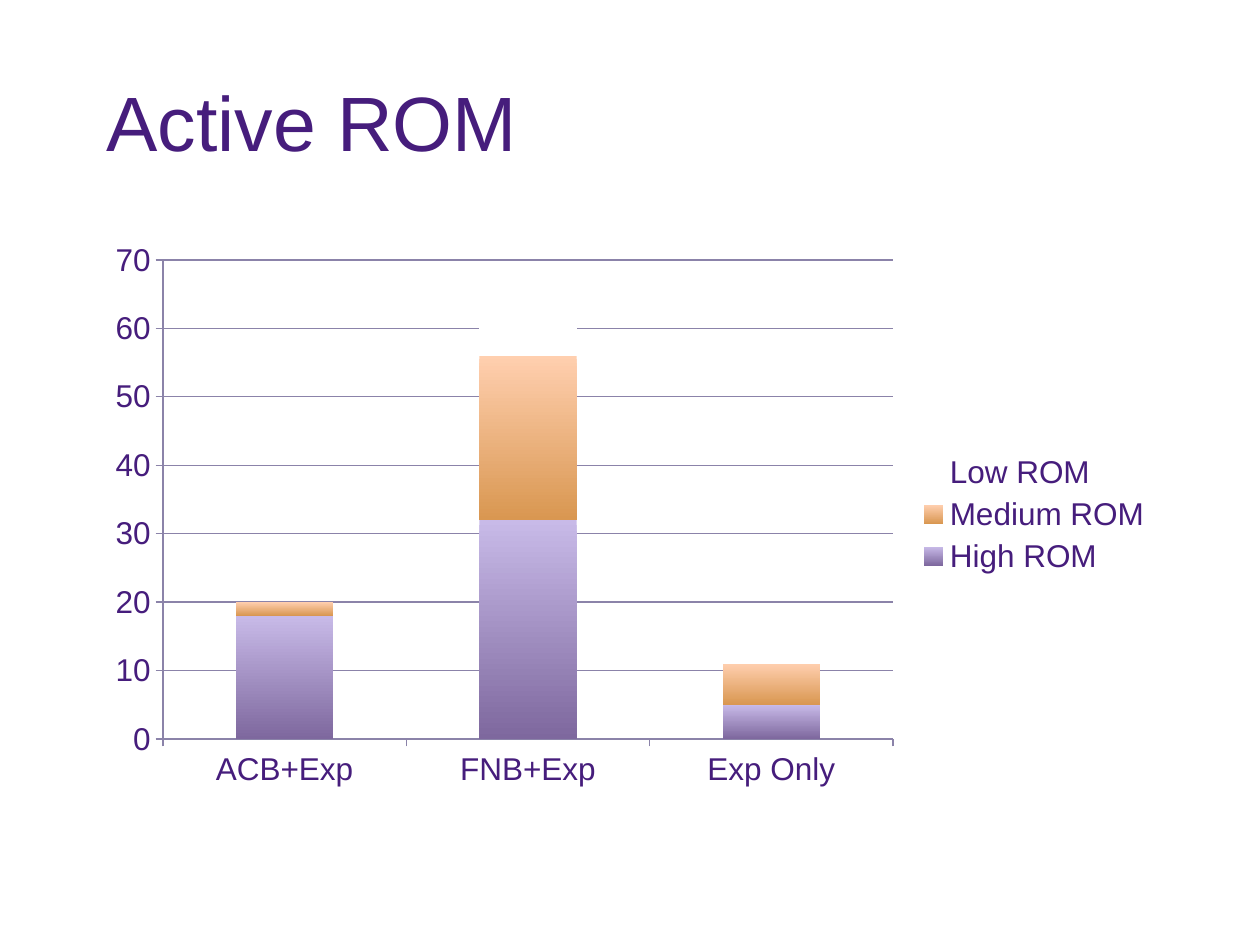
from dataclasses import dataclass

import lxml.etree
import pptx
import pptx.chart.data
import pptx.dml.color
import pptx.enum.chart
import pptx.enum.text
import pptx.oxml.ns
import pptx.util

EMU_PER_PX = 914400 / 126
FONT = "Arial"
PURPLE = "461D7C"
AXIS_GRAY = "8B83A9"


@dataclass(frozen=True)
class Box:
    left: int
    top: int
    width: int
    height: int

    def emu(self) -> list[int]:
        return [px(n) for n in (self.left, self.top, self.width, self.height)]


@dataclass(frozen=True)
class RomLevel:
    name: str
    counts: tuple[int, ...]
    top_color: str
    bottom_color: str


TITLE = Box(94, 42, 1071, 158)
CHART = Box(94, 231, 1071, 567)
PLOT = Box(163, 260, 730, 479)
TREATMENTS = ("ACB+Exp", "FNB+Exp", "Exp Only")
LEVELS = (
    RomLevel("High ROM", (18, 32, 5), "C8BAE8", "7E689E"),
    RomLevel("Medium ROM", (2, 24, 6), "FFCFAF", "D99751"),
    RomLevel("Low ROM", (0, 9, 4), "FFFFFF", "FFFFFF"),
)


def px(length: int) -> int:
    return round(length * EMU_PER_PX)


def color(value: str) -> pptx.dml.color.RGBColor:
    return pptx.dml.color.RGBColor.from_string(value)


def set_font(font, size: int) -> None:
    font.name = FONT
    font.size = pptx.util.Pt(size)
    font.color.rgb = color(PURPLE)


def set_line(line) -> None:
    line.color.rgb = color(AXIS_GRAY)
    line.width = pptx.util.Pt(0.75)


def add_title(slide, text: str) -> None:
    title = slide.shapes.add_textbox(*TITLE.emu()).text_frame
    title.word_wrap = True
    title.vertical_anchor = pptx.enum.text.MSO_ANCHOR.MIDDLE
    title.text = text
    set_font(title.paragraphs[0].font, 44)


def fill_level(fill, level: RomLevel) -> None:
    if level.top_color == level.bottom_color:
        fill.solid()
        fill.fore_color.rgb = color(level.top_color)
        return
    fill.gradient()
    fill.gradient_angle = 270
    for stop, value in zip(fill.gradient_stops, (level.top_color, level.bottom_color)):
        stop.color.rgb = color(value)


def place_plot(chart) -> None:
    qn = pptx.oxml.ns.qn
    plot_area = chart.element.find(".//" + qn("c:plotArea"))
    for old_layout in plot_area.findall(qn("c:layout")):
        plot_area.remove(old_layout)
    layout = lxml.etree.Element(qn("c:layout"))
    manual = lxml.etree.SubElement(layout, qn("c:manualLayout"))
    settings = {
        "layoutTarget": "inner",
        "xMode": "edge",
        "yMode": "edge",
        "x": (PLOT.left - CHART.left) / CHART.width,
        "y": (PLOT.top - CHART.top) / CHART.height,
        "w": PLOT.width / CHART.width,
        "h": PLOT.height / CHART.height,
    }
    for tag, value in settings.items():
        lxml.etree.SubElement(manual, qn("c:" + tag), val=str(value))
    plot_area.insert(0, layout)


def add_rom_chart(slide) -> None:
    data = pptx.chart.data.CategoryChartData()
    data.categories = TREATMENTS
    for level in LEVELS:
        data.add_series(level.name, level.counts)
    chart = slide.shapes.add_chart(
        pptx.enum.chart.XL_CHART_TYPE.COLUMN_STACKED, *CHART.emu(), data
    ).chart
    chart.has_title = False
    set_font(chart.font, 18)

    chart.has_legend = True
    chart.legend.position = pptx.enum.chart.XL_LEGEND_POSITION.RIGHT
    chart.legend.include_in_layout = False

    for axis in (chart.category_axis, chart.value_axis):
        axis.major_tick_mark = pptx.enum.chart.XL_TICK_MARK.OUTSIDE
        set_line(axis.format.line)
    counts = chart.value_axis
    counts.minimum_scale, counts.maximum_scale, counts.major_unit = 0, 70, 10
    counts.has_major_gridlines = True
    set_line(counts.major_gridlines.format.line)

    columns = chart.plots[0]
    columns.gap_width = 150
    columns.overlap = 100
    columns.vary_by_categories = False
    for series, level in zip(columns.series, LEVELS):
        fill_level(series.format.fill, level)
    place_plot(chart)


def main() -> None:
    deck = pptx.Presentation()
    deck.slide_width, deck.slide_height = px(1260), px(945)
    slide = deck.slides.add_slide(deck.slide_layouts[6])
    add_title(slide, "Active ROM")
    add_rom_chart(slide)
    deck.save("out.pptx")


if __name__ == "__main__":
    main()
